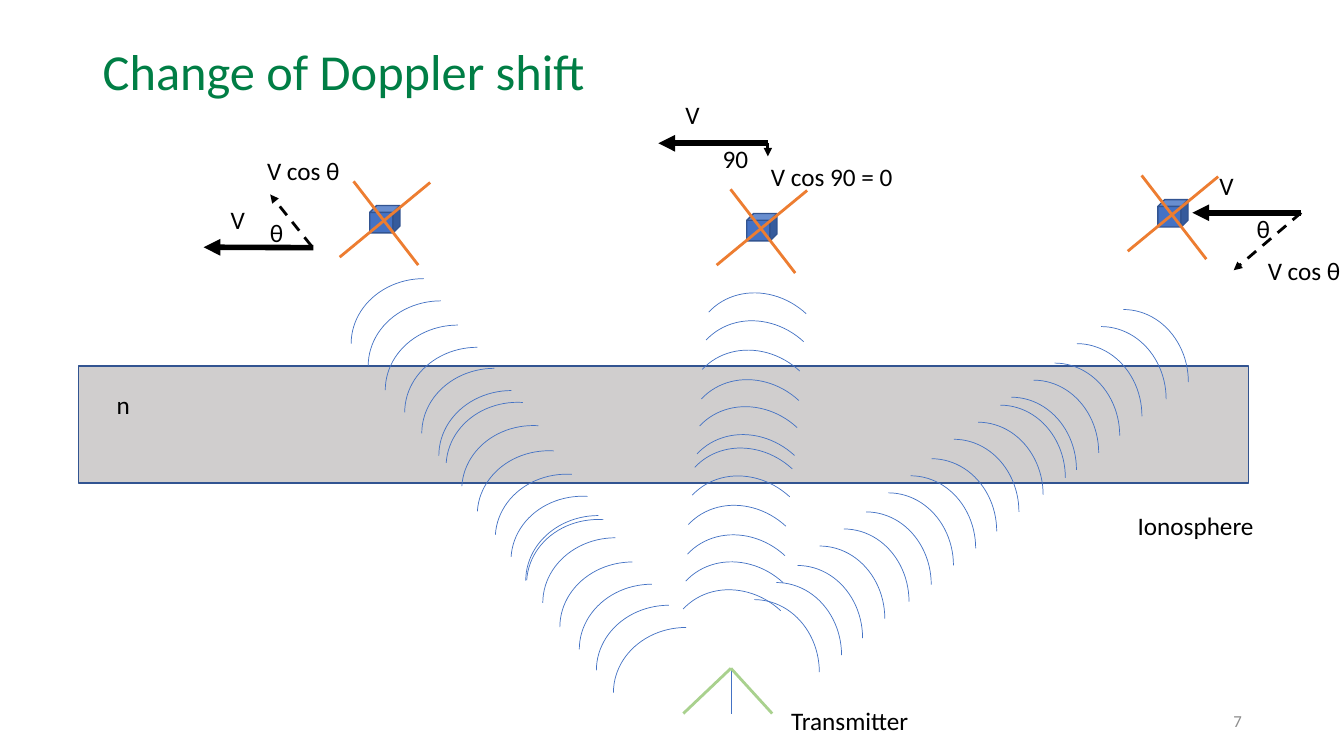
"""Build the slide on the change of Doppler shift of a satellite above the ionosphere."""
from dataclasses import dataclass
from math import cos, radians, sin

from lxml.etree import SubElement
from pptx import Presentation
from pptx.dml.color import RGBColor
from pptx.enum.dml import MSO_LINE
from pptx.enum.shapes import MSO_CONNECTOR, MSO_SHAPE
from pptx.enum.text import MSO_ANCHOR, MSO_AUTO_SIZE, PP_ALIGN
from pptx.oxml.ns import qn
from pptx.util import Cm, Pt


@dataclass(frozen=True)
class Theme:
    """Colours, type sizes and line widths of the slide."""
    font: str = "Calibri"
    title: str = "007E45"
    ink: str = "000000"
    muted: str = "8C8C8C"
    blue: str = "4472C4"
    edge: str = "325491"
    layer: str = "D0CECE"
    panel: str = "ED7D31"
    mast: str = "A9D18E"
    title_size: int = 36
    label_size: int = 18
    number_size: int = 12
    thin: float = 0.5
    outline: float = 1
    medium: float = 2
    thick: float = 4


THEME = Theme()

TITLE = ("Change of Doppler shift", 2.34, 1.02, 15.32, 1.68)
SLIDE_NUMBER = ("7", 23.93, 17.65, 7.62, 1.02)
LABEL_HEIGHT = 1.02
LABELS = [
    ("V cos θ", 31.7, 6.32, 2.36),
    ("V", 30.48, 4.17, 0.89),
    ("θ", 31.42, 5.26, 0.86),
    ("V cos 90 = 0", 19.18, 3.94, 3.61),
    ("V", 17.02, 2.39, 0.89),
    ("90", 17.96, 3.48, 1.17),
    ("V cos θ", 6.48, 3.78, 2.36),
    ("V", 5.56, 5.03, 0.89),
    ("θ", 6.55, 5.36, 0.86),
    ("Transmitter", 19.69, 17.65, 3.51),
    ("Ionosphere", 28.42, 12.73, 3.48),
    ("n", 2.69, 9.68, 0.86),
]
IONOSPHERE = (1.98, 9.22, 29.49, 2.95)

VELOCITIES = [
    (32.79, 5.36, 30.05, 5.36),
    (19.35, 3.61, 16.59, 3.61),
    (7.9, 6.24, 5.13, 6.23),
]
RADIAL_VELOCITIES = [
    (32.79, 5.36, 31.09, 6.81),
    (19.35, 3.61, 19.35, 3.94),
    (7.85, 6.2, 6.81, 4.9),
]

SATELLITES = [(29.18, 5.03), (9.32, 5.18), (18.82, 5.38)]
BODY_SIZE = (0.76, 0.69)
PANELS = [(-0.41, -0.61, 1.63, 2.12), (-0.76, 1.3, 1.52, -0.58)]
PANELS[0] = (-0.41, -0.61, 1.22, 1.5)

ANTENNA_TOP = (18.42, 16.84)
ANTENNA_FOOT = 17.98
ANTENNA_LEGS = [
    (18.42, THEME.blue, THEME.thin),
    (17.22, THEME.mast, THEME.medium),
    (19.46, THEME.mast, THEME.medium),
]

WAVE_SIZE = (3.28, 3.66)
WAVE_STEPS = [(0, 0), (0.56, -0.43), (1.09, -0.86),
              (1.65, -1.35), (2.26, -1.78), (2.82, -2.21)]
WAVE_TRAINS = [
    (17.37, 15.11, 0),
    (20.75, 12.42, 0),
    (23.85, 10.01, 0),
    (15.65, 15.62, 270),
    (13.46, 12.9, 273.6),
    (11.25, 9.65, 270),
    (17.27, 10.85, 312.8),
    (16.92, 14.76, 312.8),
]


def rgb(colour):
    return RGBColor.from_string(colour)


def add_text(slide, content, size, colour, wrap=True):
    text, *place = content
    box = slide.shapes.add_textbox(*map(Cm, place))
    frame = box.text_frame
    frame.text = text
    frame.word_wrap = wrap
    frame.auto_size = MSO_AUTO_SIZE.NONE if wrap else MSO_AUTO_SIZE.SHAPE_TO_FIT_TEXT
    frame.vertical_anchor = MSO_ANCHOR.MIDDLE if wrap else MSO_ANCHOR.TOP
    paragraph = frame.paragraphs[0]
    font = paragraph.runs[0].font
    font.name, font.size = THEME.font, Pt(size)
    font.color.rgb = rgb(colour)
    return paragraph


def add_outline(slide, kind, place, line, width, fill=None):
    shape = slide.shapes.add_shape(kind, *map(Cm, place))
    shape.shadow.inherit = False
    if fill:
        shape.fill.solid()
        shape.fill.fore_color.rgb = rgb(fill)
    else:
        shape.fill.background()
    shape.line.color.rgb = rgb(line)
    shape.line.width = Pt(width)
    return shape


def add_line(slide, ends, colour, width):
    connector = slide.shapes.add_connector(MSO_CONNECTOR.STRAIGHT, *map(Cm, ends))
    connector.line.color.rgb = rgb(colour)
    connector.line.width = Pt(width)
    SubElement(connector.element.spPr, qn("a:effectLst"))
    return connector


def add_arrow(slide, ends, width, dash=MSO_LINE.SOLID):
    arrow = add_line(slide, ends, THEME.ink, width)
    arrow.line.dash_style = dash
    SubElement(arrow.line._get_or_add_ln(), qn("a:tailEnd"), type="triangle")


def add_wave_train(slide, left, top, angle):
    turn = radians(angle)
    for dx, dy in WAVE_STEPS:
        x = left + dx * cos(turn) - dy * sin(turn)
        y = top + dx * sin(turn) + dy * cos(turn)
        wave = add_outline(slide, MSO_SHAPE.ARC, (x, y, *WAVE_SIZE), THEME.blue, THEME.thin)
        wave.rotation = angle


def add_satellite(slide, left, top):
    add_outline(slide, MSO_SHAPE.CUBE, (left, top, *BODY_SIZE),
                THEME.edge, THEME.outline, THEME.blue)
    for x1, y1, x2, y2 in PANELS:
        ends = (left + x1, top + y1, left + x2, top + y2)
        add_line(slide, ends, THEME.panel, THEME.medium)


def main():
    deck = Presentation()
    deck.slide_width, deck.slide_height = Cm(33.87), Cm(19.05)
    slide = deck.slides.add_slide(deck.slide_layouts[6])

    add_text(slide, TITLE, THEME.title_size, THEME.title).line_spacing = 0.9
    number = add_text(slide, SLIDE_NUMBER, THEME.number_size, THEME.muted)
    number.alignment = PP_ALIGN.RIGHT

    add_outline(slide, MSO_SHAPE.RECTANGLE, IONOSPHERE,
                THEME.edge, THEME.outline, THEME.layer)
    for train in WAVE_TRAINS:
        add_wave_train(slide, *train)
    for satellite in SATELLITES:
        add_satellite(slide, *satellite)
    for foot, colour, width in ANTENNA_LEGS:
        add_line(slide, (*ANTENNA_TOP, foot, ANTENNA_FOOT), colour, width)
    for ends in VELOCITIES:
        add_arrow(slide, ends, THEME.thick)
    for ends in RADIAL_VELOCITIES:
        add_arrow(slide, ends, THEME.medium, MSO_LINE.DASH)
    for label in LABELS:
        add_text(slide, (*label, LABEL_HEIGHT), THEME.label_size, THEME.ink, wrap=False)

    deck.save("out.pptx")


if __name__ == "__main__":
    main()
